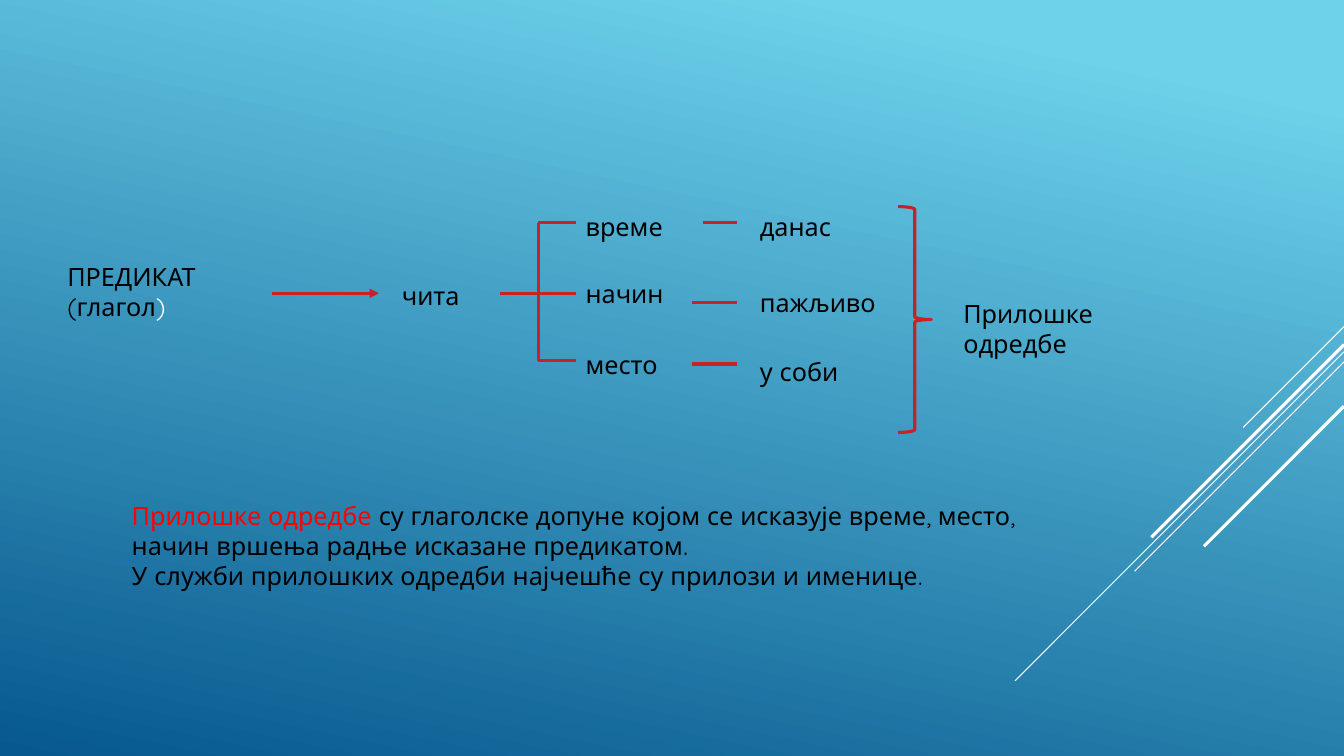
from dataclasses import dataclass

from lxml.etree import SubElement
from pptx import Presentation
from pptx.dml.color import RGBColor
from pptx.enum.shapes import MSO_CONNECTOR, MSO_SHAPE
from pptx.oxml.ns import qn
from pptx.util import Pt


@dataclass(frozen=True)
class Theme:
    font: str = "Quicksand"
    size: Pt = Pt(18)
    thin: float = 0.75
    thick: float = 2.25
    black: RGBColor = RGBColor(0x00, 0x00, 0x00)
    white: RGBColor = RGBColor(0xFF, 0xFF, 0xFF)
    highlight: RGBColor = RGBColor(0xFF, 0x00, 0x00)
    line: RGBColor = RGBColor(0xC6, 0x23, 0x24)
    sky: RGBColor = RGBColor(0x6E, 0xD2, 0xEB)
    sea: RGBColor = RGBColor(0x06, 0x58, 0x8E)


theme = Theme()
presentation = Presentation()
presentation.slide_width = Pt(960)
presentation.slide_height = Pt(540)
slide = presentation.slides.add_slide(presentation.slide_layouts[6])


def add_line(x1, y1, x2, y2, color=theme.line, width=theme.thick):
    connector = slide.shapes.add_connector(
        MSO_CONNECTOR.STRAIGHT, Pt(x1), Pt(y1), Pt(x2), Pt(y2))
    connector.line.color.rgb = color
    connector.line.width = Pt(width)
    SubElement(connector._element.spPr, qn("a:effectLst"))
    return connector


def add_text(left, top, width, height, *lines):
    box = slide.shapes.add_textbox(Pt(left), Pt(top), Pt(width), Pt(height))
    frame = box.text_frame
    frame.word_wrap = True
    for index, line in enumerate(lines):
        paragraph = frame.paragraphs[0] if index == 0 else frame.add_paragraph()
        paragraph.font.name = theme.font
        paragraph.font.size = theme.size
        for text, color in line:
            run = paragraph.add_run()
            run.text = text
            run.font.color.rgb = color
    return box


background = slide.background.fill
background.gradient()
background.gradient_angle = 258
for stop, position, color in zip(
        background.gradient_stops, (0.1, 1), (theme.sky, theme.sea)):
    stop.position = position
    stop.color.rgb = color

for top, span, width in [
    (233.3, 72, theme.thin),
    (251.3, 235, theme.thin),
    (258.5, 149.5, theme.thin),
    (246.2, 137.6, theme.thick),
    (290.2, 100, theme.thick),
]:
    add_line(960, top, 960 - span, top + span, theme.white, width)

middle = 209.5
add_text(41, 183, 126, 51,
         [("ПРЕДИКАТ", theme.black)],
         [("(глагол", theme.black), (")", theme.white)])
arrow = add_line(194.4, middle, 270.7, middle)
SubElement(arrow.line._get_or_add_ln(), qn("a:tailEnd"), type="triangle")
add_text(280, 196.5, 65.5, 29, [("чита", theme.black)])

trunk = 384.5
add_line(357.5, middle, trunk, middle)
add_line(trunk, 159.2, trunk, 257.8)

for question, question_top, branch, answer, answer_top, dash_left, dash in [
    ("време", 147.6, 159.2, "данас", 147.6, 502.5, 159.2),
    ("начин", 195, middle, "пажљиво", 201.6, 494, 216),
    ("место", 246.2, 257.8, "у соби", 251.3, 494, 260),
]:
    question_box = add_text(411.2, question_top, 82, 29, [(question, theme.black)])
    branch_line = add_line(trunk, branch, 411.2, branch)
    if branch == middle:
        branch_line.end_connect(question_box, 1)
    add_line(dash_left, dash, 526.5, dash)
    add_text(535.7, answer_top, 106, 29, [(answer, theme.black)])

brace = slide.shapes.add_shape(
    MSO_SHAPE.RIGHT_BRACE, Pt(641.5), Pt(147.6), Pt(23.8), Pt(161.3))
brace.shadow.inherit = False
brace.fill.background()
brace.line.color.rgb = theme.line
brace.line.width = Pt(theme.thick)

add_text(681, 209.5, 141, 51,
         [("Прилошке", theme.black)],
         [("одредбе", theme.black)])
add_text(87, 353.7, 671, 94.3,
         [("Прилошке одредбе ", theme.highlight),
          ("су глаголске допуне којом се исказује време, место, "
           "начин вршења радње исказане предикатом.", theme.black)],
         [("У служби прилошких одредби најчешће су прилози и именице.", theme.black)])

presentation.save("out.pptx")
